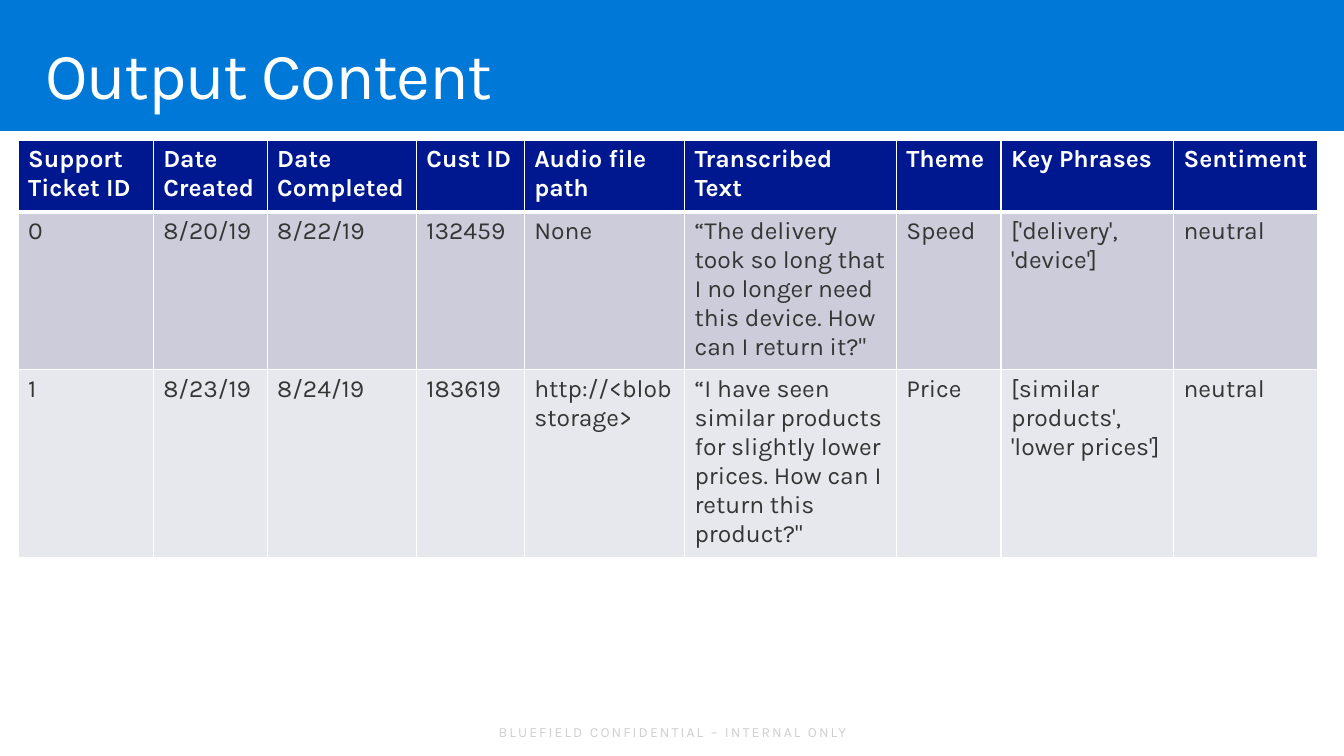
import lxml.etree
import pptx
import pptx.dml.color
import pptx.enum.shapes
import pptx.enum.text
import pptx.oxml.ns
import pptx.util
from pptx.util import Inches

# Content
TITLE = "Output Content"
FOOTER = "BLUEFIELD CONFIDENTIAL – INTERNAL ONLY"
COLUMNS = [
    ("Support Ticket ID", 1.34), ("Date Created", 1.13), ("Date Completed", 1.48),
    ("Cust ID", 1.07), ("Audio file path", 1.59), ("Transcribed Text", 2.1),
    ("Theme", 1.04), ("Key Phrases", 1.71), ("Sentiment", 1.43),
]
TICKETS = [
    ("0", "8/20/19", "8/22/19", "132459", "None",
     "“The delivery took so long that I no longer need this device. How can I return it?\"",
     "Speed", "['delivery', 'device']", "neutral"),
    ("1", "8/23/19", "8/24/19", "183619", "http://<blob storage>",
     "“I have seen similar products for slightly lower prices. How can I return this product?\"",
     "Price", "[similar products', 'lower prices']", "neutral"),
]
ROW_HEIGHTS = [0.71, 1.54, 1.82]


class Theme:
    font = "Karla"
    band, panel, header = "0078D7", "FFFFFF", "00188F"
    stripes = ["CCCCDB", "E7E8EE"]
    light, dark, faint = "FFFFFF", "353535", "CFCFCF"
    title_size, table_size, footer_size = 47, 17.6, 10
    thin, thick = 1, 3


def color(value):
    return pptx.dml.color.RGBColor.from_string(value)


def style(para, size, ink, bold=False):
    para.font.name = Theme.font
    para.font.size = pptx.util.Pt(size)
    para.font.bold = bold
    para.font.color.rgb = color(ink)


def add_text(page, area, text, size, ink, tracking, margins=(0, 0)):
    box = page.shapes.add_textbox(*map(Inches, area))
    frame = box.text_frame
    frame.margin_left = frame.margin_right = Inches(margins[0])
    frame.margin_top = frame.margin_bottom = Inches(margins[1])
    para = frame.paragraphs[0]
    span = para.add_run()
    span.text = text
    span._r.get_or_add_rPr().set("spc", str(tracking))
    style(para, size, ink)
    return frame


def add_borders(cell, widths):
    properties = cell._tc.get_or_add_tcPr()
    for side, width in widths.items():
        line = lxml.etree.SubElement(
            properties, pptx.oxml.ns.qn("a:ln" + side), w=str(pptx.util.Pt(width)))
        fill = lxml.etree.SubElement(line, pptx.oxml.ns.qn("a:solidFill"))
        lxml.etree.SubElement(fill, pptx.oxml.ns.qn("a:srgbClr"), val=Theme.light)


def add_ticket_table(page):
    rows = [[name for name, width in COLUMNS], *TICKETS]
    widths = [width for name, width in COLUMNS]
    table = page.shapes.add_table(
        len(rows), len(COLUMNS), Inches(0.18), Inches(1.39),
        Inches(sum(widths)), Inches(sum(ROW_HEIGHTS))).table
    for column, width in zip(table.columns, widths):
        column.width = Inches(width)
    for index, (row, height, texts) in enumerate(zip(table.rows, ROW_HEIGHTS, rows)):
        row.height = Inches(height)
        is_header = index == 0
        borders = dict.fromkeys("LRTB", Theme.thin)
        if is_header:
            borders["B"] = Theme.thick
        elif index == 1:
            borders["T"] = Theme.thick
        for cell, text in zip(row.cells, texts):
            cell.text = text
            add_borders(cell, borders)
            cell.fill.solid()
            cell.fill.fore_color.rgb = color(
                Theme.header if is_header else Theme.stripes[index - 1])
            style(cell.text_frame.paragraphs[0], Theme.table_size,
                  Theme.light if is_header else Theme.dark, is_header)


def main():
    deck = pptx.Presentation()
    deck.slide_width, deck.slide_height = Inches(13.33), Inches(7.5)
    page = deck.slides.add_slide(deck.slide_layouts[6])

    # Blue background and white panel
    page.background.fill.solid()
    page.background.fill.fore_color.rgb = color(Theme.band)
    panel = page.shapes.add_shape(
        pptx.enum.shapes.MSO_SHAPE.RECTANGLE, 0, Inches(1.3), Inches(13.33), Inches(6.2))
    panel.shadow.inherit = False
    panel.fill.solid()
    panel.fill.fore_color.rgb = color(Theme.panel)
    panel.line.fill.background()

    # Footer
    footer = add_text(page, (4.81, 7.18, 3.72, 0.17), FOOTER,
                      Theme.footer_size, Theme.faint, 150)
    footer.word_wrap = False
    footer.vertical_anchor = pptx.enum.text.MSO_ANCHOR.MIDDLE
    footer.paragraphs[0].alignment = pptx.enum.text.PP_ALIGN.CENTER

    # Title
    title = add_text(page, (0.29, 0.32, 12.75, 0.98), TITLE,
                     Theme.title_size, Theme.light, -100, (0.16, 0.1))
    title.word_wrap = True
    title.paragraphs[0].line_spacing = 0.9

    # Ticket table
    add_ticket_table(page)
    deck.save("out.pptx")


if __name__ == "__main__":
    main()
